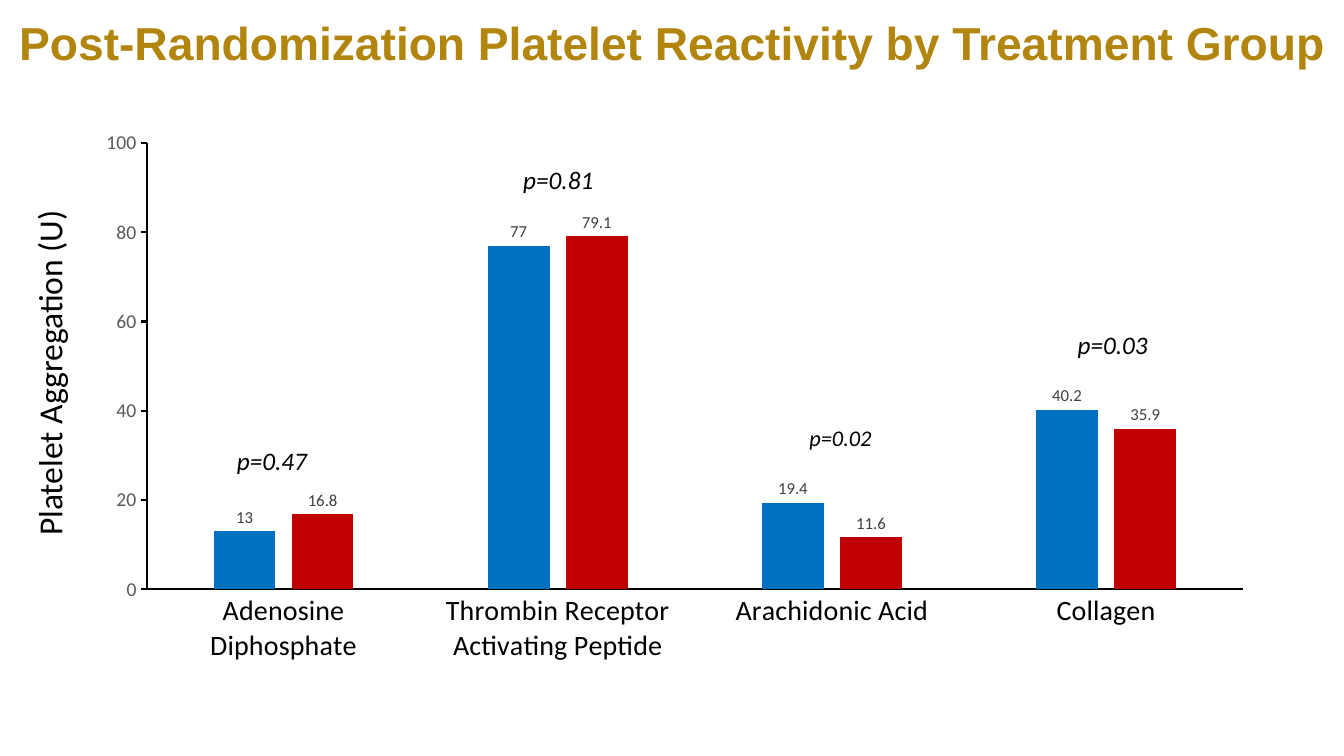
from dataclasses import dataclass

from lxml import etree
from pptx import Presentation
from pptx.chart.data import CategoryChartData
from pptx.dml.color import RGBColor
from pptx.enum.chart import XL_CHART_TYPE, XL_LABEL_POSITION, XL_TICK_MARK
from pptx.enum.text import MSO_ANCHOR, MSO_AUTO_SIZE, PP_ALIGN
from pptx.oxml import parse_xml
from pptx.oxml.ns import nsdecls, qn
from pptx.util import Pt


@dataclass(frozen=True)
class Theme:
    title_font: str = "Arial"
    body_font: str = "Calibri"
    gold: str = "B2860E"
    black: str = "000000"
    tick_gray: str = "595959"
    label_gray: str = "404040"
    blue: str = "0070C0"
    red: str = "C00000"
    title_size: float = 33
    axis_title_size: float = 24
    category_size: float = 20
    p_value_size: float = 18
    small_p_value_size: float = 16
    tick_size: float = 14
    label_size: float = 12


THEME = Theme()
AGENTS = ["Adenosine Diphosphate", "Thrombin Receptor Activating Peptide",
          "Arachidonic Acid", "Collagen"]
GROUPS = [([13, 77, 19.4, 40.2], THEME.blue),
          ([16.8, 79.1, 11.6, 35.9], THEME.red)]
# text, left and top within the chart box, type size
P_VALUES = [("p=0.47", 100.8, 229.6, THEME.p_value_size),
            ("p=0.81", 305.3, 28.8, THEME.p_value_size),
            ("p=0.02", 506.9, 214.5, THEME.small_p_value_size),
            ("p=0.03", 701.3, 146.8, THEME.p_value_size)]


def style(font, size, color, name=THEME.body_font):
    font.size, font.name = Pt(size), name
    font.color.rgb = RGBColor.from_string(color)


def add_label(s, box, text, size, color=THEME.black, name=THEME.body_font):
    """Add a centred one-line text box and return it with its run's font."""
    sp = s.shapes.add_textbox(*map(Pt, box))
    tf = sp.text_frame
    tf.word_wrap = True
    tf.auto_size = MSO_AUTO_SIZE.SHAPE_TO_FIT_TEXT
    tf.vertical_anchor = MSO_ANCHOR.MIDDLE
    tf.text = text
    p = tf.paragraphs[0]
    p.alignment = PP_ALIGN.CENTER
    font = p.runs[0].font
    style(font, size, color, name)
    return sp, font


def add_title(s, box):
    sp, font = add_label(s, box, "Post-Randomization Platelet Reactivity by Treatment Group",
                         THEME.title_size, THEME.gold, THEME.title_font)
    font.bold = True
    sp.text_frame.margin_left = sp.text_frame.margin_right = 0


def add_axis_title(s, box):
    """Fill an upright box with text that reads from bottom to top."""
    x, y, w, h = box
    turned = (x + (w - h) / 2, y + (h - w) / 2, h, w)
    sp, _ = add_label(s, turned, "Platelet Aggregation (U)", THEME.axis_title_size)
    sp.rotation = 270


def add_p_values(s, box):
    for text, dx, dy, size in P_VALUES:
        _, font = add_label(s, (box[0] + dx, box[1] + dy, 69, size * 1.6), text, size)
        font.italic = True


def fix_plot_area(chart, x, y, w, h):
    """Set the inner plot area as fractions of the chart box."""
    plot_area = chart.plots[0]._element.getparent()
    for old in plot_area.findall(qn("c:layout")):
        plot_area.remove(old)
    layout = parse_xml(f"<c:layout {nsdecls('c')}><c:manualLayout/></c:layout>")
    settings = {"layoutTarget": "inner", "xMode": "edge", "yMode": "edge",
                "x": x, "y": y, "w": w, "h": h}
    for tag, value in settings.items():
        etree.SubElement(layout[0], qn(f"c:{tag}")).set("val", str(value))
    plot_area.insert(0, layout)


def style_axis(axis, tick_mark, size, color):
    axis.has_major_gridlines = False
    axis.major_tick_mark = tick_mark
    axis.minor_tick_mark = XL_TICK_MARK.NONE
    axis.format.line.width = Pt(1.5)
    axis.format.line.color.rgb = RGBColor.from_string(THEME.black)
    style(axis.tick_labels.font, size, color)


def add_reactivity_chart(s, box):
    data = CategoryChartData()
    data.categories = AGENTS
    for values, _ in GROUPS:
        data.add_series("", values)
    chart = s.shapes.add_chart(XL_CHART_TYPE.COLUMN_CLUSTERED, *map(Pt, box), data).chart
    chart.has_title = chart.has_legend = False
    style(chart.font, 10, THEME.black)
    fix_plot_area(chart, 0.054, 0.039, 0.926, 0.722)

    style_axis(chart.category_axis, XL_TICK_MARK.NONE, THEME.category_size, THEME.black)
    style_axis(chart.value_axis, XL_TICK_MARK.OUTSIDE, THEME.tick_size, THEME.tick_gray)
    chart.value_axis.minimum_scale = 0
    chart.value_axis.maximum_scale = 100
    chart.value_axis.major_unit = 20

    plot = chart.plots[0]
    plot.vary_by_categories = False
    plot.gap_width, plot.overlap = 219, -27
    for series, (_, color) in zip(plot.series, GROUPS):
        series.format.fill.solid()
        series.format.fill.fore_color.rgb = RGBColor.from_string(color)
        labels = series.data_labels
        labels.show_value = True
        labels.position = XL_LABEL_POSITION.OUTSIDE_END
        style(labels.font, THEME.label_size, THEME.label_gray)


def build_slide(prs):
    s = prs.slides.add_slide(prs.slide_layouts[6])
    chart_box = (59, 85, 846, 441.4)
    add_reactivity_chart(s, chart_box)
    add_axis_title(s, (17, 42, 36, 449))
    add_p_values(s, chart_box)
    add_title(s, (5.8, 6.5, 949, 47.5))


def main():
    prs = Presentation()
    prs.slide_width, prs.slide_height = Pt(960), Pt(540)
    build_slide(prs)
    prs.save("out.pptx")


if __name__ == "__main__":
    main()
